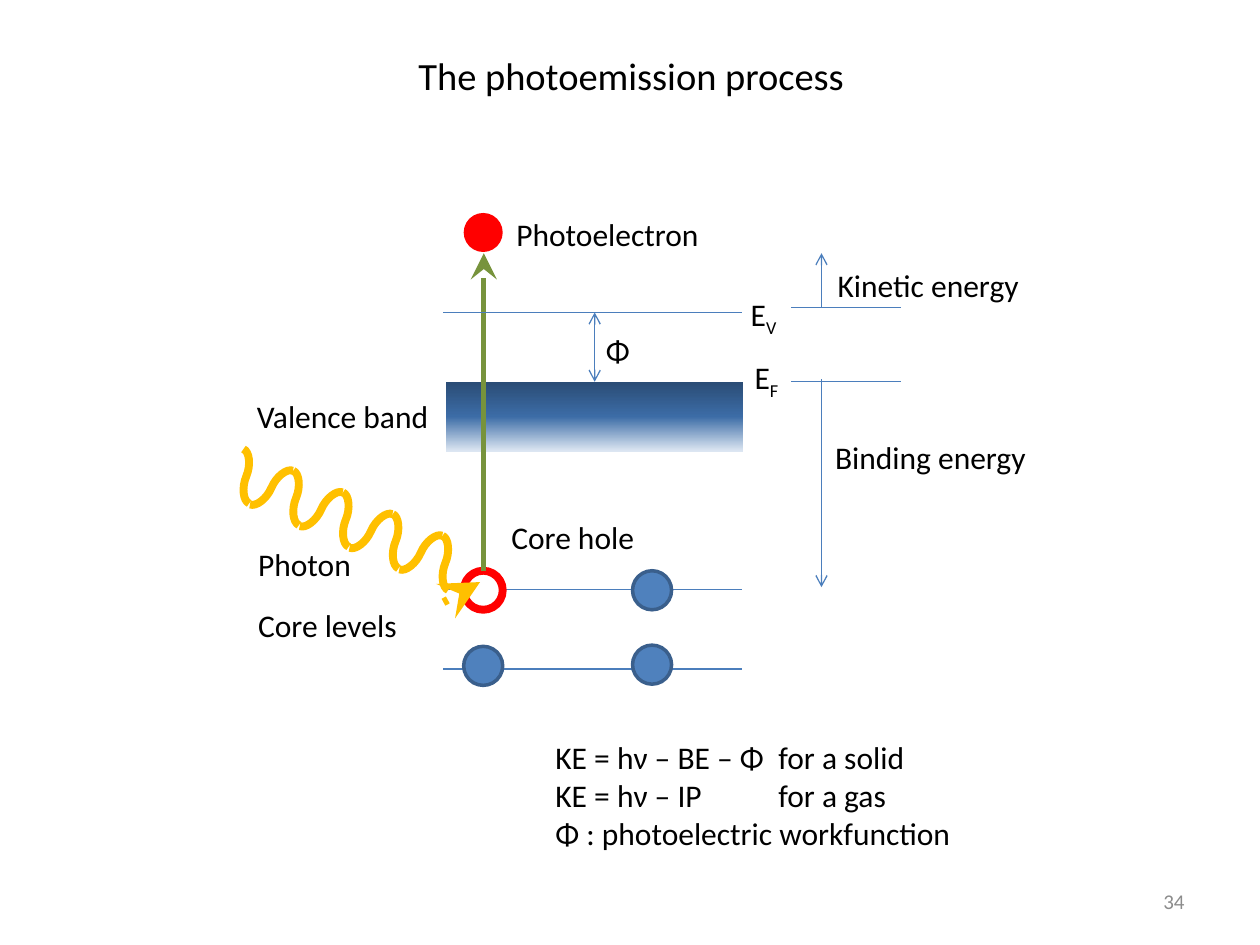
from copy import deepcopy

from lxml.etree import SubElement
from pptx import Presentation
from pptx.dml.color import RGBColor
from pptx.enum.shapes import MSO_CONNECTOR, MSO_SHAPE
from pptx.enum.text import MSO_ANCHOR, PP_ALIGN
from pptx.oxml.ns import qn
from pptx.util import Inches, Pt


class Theme:
    font = "Calibri"
    title, body, small = 22, 18, 12
    black, grey, white = "000000", "8C8C8C", "FFFFFF"
    line, fill, rim = "4B7EBC", "4F81BD", "3A5F8C"
    red, green, gold = "FF0000", "77933C", "FFC000"
    band = [(0, "2A4C75"), (0.5, "3C6CA6"), (1, "DCE6F2")]
    thin, edge, thick, bold = 0.75, 2, 3, 4.5
    heads = {"arrow": "med", "stealth": "lg"}


# Content: text, left, top, width, height
LABELS = [
    ("Photoelectron", 4, 1.66, 1.66, 0.4),
    ("Φ", 4.71, 2.58, 0.39, 0.4),
    ("Valence band", 1.94, 3.1, 1.58, 0.4),
    ("Core levels", 1.95, 4.76, 1.32, 0.4),
    ("Core hole", 3.96, 4.06, 1.19, 0.4),
    ("Photon", 1.95, 4.28, 0.95, 0.4),
    ("Kinetic energy", 6.55, 2.06, 1.66, 0.4),
    ("Binding energy", 6.53, 3.43, 1.73, 0.4),
]
# Letter, subscript, left, top, width
LEVELS = [("E", "F", 5.89, 2.79, 0.42), ("E", "V", 5.86, 2.29, 0.44)]
RULES = ["KE = hν – BE – Φ\tfor a solid",
         "KE = hν – IP\tfor a gas",
         "Φ : photoelectric workfunction"]

# Diagram positions
LEFT, RIGHT = 3.52, 5.89
VAC, FERMI, CORE, DEEP = 2.48, 3.03, 4.68, 5.31
SIDE, SIDE_VAC = 6.52, 2.44
DOT = 0.31
COLS = 3.68, 5.02
AXIS = 3.84

# Left, top, fill, rim, rim width
DOTS = [
    (COLS[0], 4.53, Theme.white, Theme.red, Theme.bold),
    (COLS[1], 4.53, Theme.fill, Theme.rim, Theme.edge),
    (COLS[0], 5.13, Theme.fill, Theme.rim, Theme.edge),
    (COLS[1], 5.12, Theme.fill, Theme.rim, Theme.edge),
    (COLS[0], 1.69, Theme.red, None, 0),
]

# Photon wave: half waves falling and rising, then the arrow tip
WAVE = {"w": 0.21, "h": 0.38, "turn": 23}
FALL = {"x": 1.85, "y": 3.59, "count": 5, "flip": False}
RISE = {"x": 2.05, "y": 3.68, "count": 4, "flip": True}
STEP = 0.395, 0.172
TIP = 3.52, 4.78, 3.81, 4.62

deck = Presentation()
deck.slide_width, deck.slide_height = Inches(10), Inches(7.5)
slide = deck.slides.add_slide(deck.slide_layouts[6])
shapes = slide.shapes


def rgb(code):
    return RGBColor.from_string(code)


def ink(item, color, width, head=None, tail=None):
    item.line.color.rgb = rgb(color)
    item.line.width = Pt(width)
    ln = item._element.spPr.find(qn("a:ln"))
    for tag, kind in (("a:headEnd", head), ("a:tailEnd", tail)):
        if kind:
            size = Theme.heads[kind]
            SubElement(ln, qn(tag), type=kind, w=size, len=size)


def link(x1, y1, x2, y2, color=Theme.line, width=Theme.thin,
         head=None, tail=None, kind=MSO_CONNECTOR.STRAIGHT):
    item = shapes.add_connector(kind, *map(Inches, (x1, y1, x2, y2)))
    ink(item, color, width, head, tail)
    SubElement(item._element.spPr, qn("a:effectLst"))
    return item


def form(kind, x, y, w, h):
    item = shapes.add_shape(kind, *map(Inches, (x, y, w, h)))
    item.shadow.inherit = False
    return item


def style(run, size, color):
    run.font.name = Theme.font
    run.font.size = Pt(size)
    run.font.color.rgb = rgb(color)


def label(text, x, y, w, h, size=Theme.body, color=Theme.black,
          align=PP_ALIGN.LEFT, anchor=MSO_ANCHOR.TOP, wrap=False):
    box = shapes.add_textbox(*map(Inches, (x, y, w, h)))
    frame = box.text_frame
    frame.text = text
    frame.word_wrap = wrap
    frame.vertical_anchor = anchor
    for para in frame.paragraphs:
        para.alignment = align
        for run in para.runs:
            style(run, size, color)
    return frame


# Title
label("The photoemission process", 0.51, 0.29, 9, 0.61, Theme.title,
      align=PP_ALIGN.CENTER, anchor=MSO_ANCHOR.MIDDLE, wrap=True)

# Valence band
band = form(MSO_SHAPE.RECTANGLE, 3.54, FERMI, 2.36, 0.55)
band.line.fill.background()
band.fill.gradient()
band.fill.gradient_angle = 270
stops = band._element.spPr.find(".//" + qn("a:gsLst"))
stops.append(deepcopy(stops[-1]))
for stop, (place, color) in zip(band.fill.gradient_stops, Theme.band):
    stop.position = place
    stop.color.rgb = rgb(color)

# Core levels and electrons
for y in (CORE, DEEP):
    link(LEFT, y, RIGHT, y)
for x, y, fill, rim, width in DOTS:
    dot = form(MSO_SHAPE.OVAL, x, y, DOT, DOT)
    dot.fill.solid()
    dot.fill.fore_color.rgb = rgb(fill)
    if rim:
        ink(dot, rim, width)
    else:
        dot.line.fill.background()

# Emission, vacuum level and work function
link(AXIS, 4.53, AXIS, 2.01, Theme.green, Theme.thick, tail="stealth")
link(LEFT, VAC, RIGHT, VAC)
work = link(4.72, VAC, 4.72, FERMI, head="arrow", tail="arrow")
work.end_connect(band, 0)

# Energy scale on the right
for y in (SIDE_VAC, FERMI):
    link(6.28, y, 7.15, y)
link(SIDE, SIDE_VAC, SIDE, 2.01, tail="arrow")
link(SIDE, 3.01, SIDE, 4.66, tail="arrow")

# Photon wave
for part in (FALL, RISE):
    for i in range(part["count"]):
        x, y = part["x"] + i * STEP[0], part["y"] + i * STEP[1]
        ends = [x, x + WAVE["w"]]
        if part["flip"]:
            ends.reverse()
        curve = link(ends[0], y, ends[1], y + WAVE["h"], Theme.gold,
                     Theme.bold, kind=MSO_CONNECTOR.CURVE)
        curve._element.spPr.xfrm.set("rot", str(WAVE["turn"] * 60000))
link(*TIP, Theme.gold, Theme.bold, tail="stealth")

# Labels
for item in LABELS:
    label(*item)
for base, sub, x, y, w in LEVELS:
    run = label(base, x, y, w, 0.4).paragraphs[0].add_run()
    run.text = sub
    style(run, Theme.body, Theme.black)
    run.font._element.set("baseline", "-25000")

# Energy balance, with the cases aligned at a tab stop
rules = label("\n".join(RULES), 4.31, 5.81, 3.43, 1.01)
for para in rules.paragraphs:
    tabs = SubElement(para._p.get_or_add_pPr(), qn("a:tabLst"))
    SubElement(tabs, qn("a:tab"), pos=str(Inches(1.77)), algn="l")

# Slide number
label("34", 7.17, 6.95, 2.33, 0.4, Theme.small, Theme.grey,
      PP_ALIGN.RIGHT, MSO_ANCHOR.MIDDLE, True)

deck.save("out.pptx")
